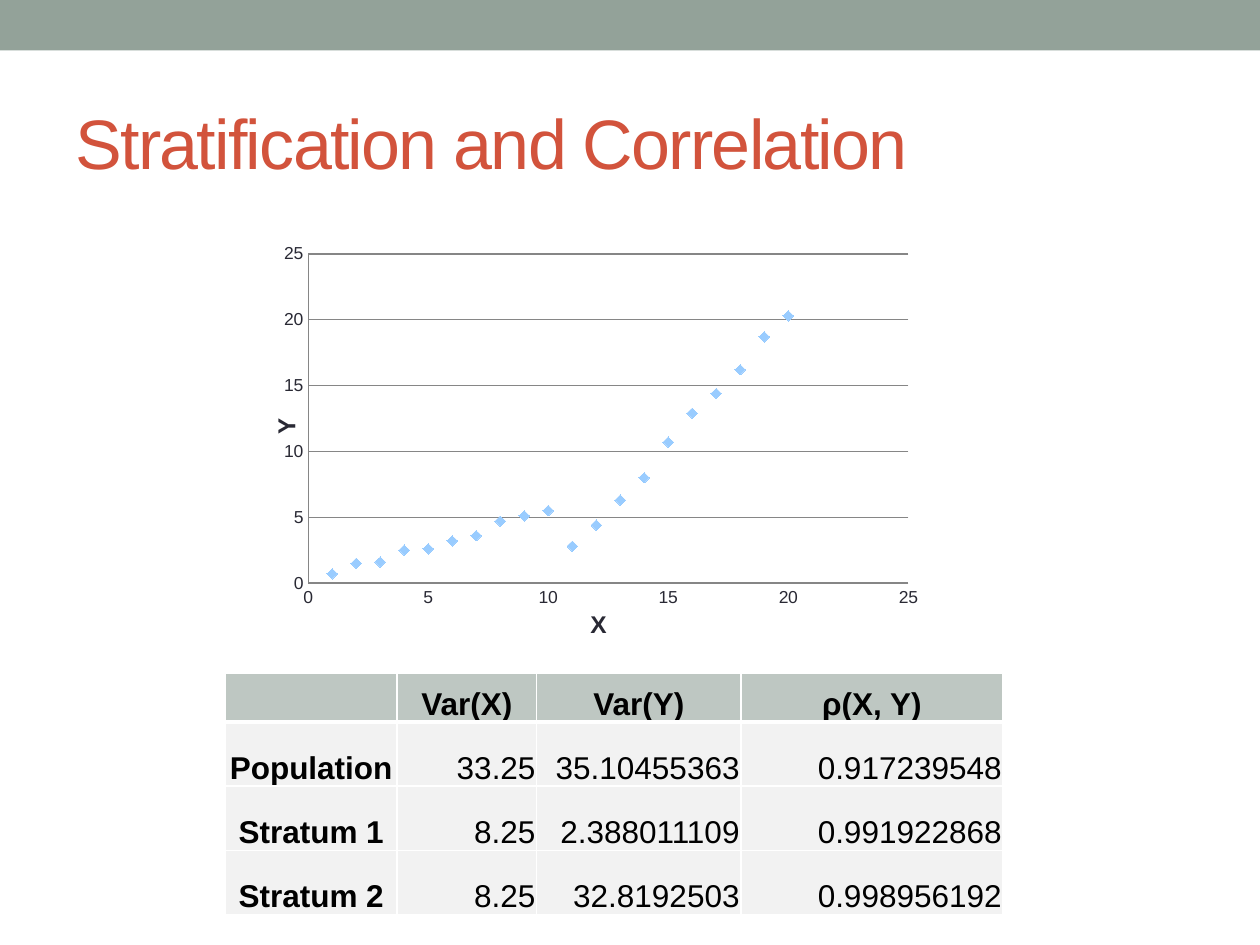
from dataclasses import dataclass

import pptx
import pptx.chart.data
import pptx.dml.color
import pptx.enum.chart
import pptx.enum.shapes
import pptx.enum.text
import pptx.oxml
import pptx.oxml.ns
import pptx.util

Inches, Pt = pptx.util.Inches, pptx.util.Pt
ALIGN, ANCHOR = pptx.enum.text.PP_ALIGN, pptx.enum.text.MSO_ANCHOR
XL = pptx.enum.chart
NS = pptx.oxml.ns.nsdecls
qn = pptx.oxml.ns.qn


@dataclass(frozen=True)
class Theme:
    font: str = "Arial"
    bar: str = "93A299"
    title: str = "D2533C"
    chart_text: str = "292934"
    marker: str = "99CCFF"
    line: str = "868686"
    header: str = "BEC7C2"
    body: str = "F2F2F2"
    border: str = "FFFFFF"
    table_text: str = "000000"
    title_size: int = 40
    tick_size: int = 10
    axis_size: int = 14
    table_size: int = 18


@dataclass(frozen=True)
class Box:
    """A place given as shares of the slide's width and height."""
    x: float
    y: float
    w: float
    h: float

    def place(self, prs) -> tuple:
        return tuple(int(share * size) for share, size in zip(
            (self.x, self.y, self.w, self.h),
            (prs.slide_width, prs.slide_height) * 2))


T = Theme()
BAR = Box(0, 0, 1, 0.4 / 7.5)
TITLE = Box(0.05, 0.58 / 7.5, 0.9, 0.144)
CHART = Box(0.205, 1.55 / 7.5, 0.591, 3.58 / 7.5)
TABLE = Box(0.179, 5.34 / 7.5, 0.617, 1.92 / 7.5)

Y_VALUES = [0.7, 1.5, 1.6, 2.5, 2.6, 3.2, 3.6, 4.7, 5.1, 5.5,
            2.8, 4.4, 6.3, 8, 10.7, 12.9, 14.4, 16.2, 18.7, 20.3]
COLUMNS = [1.36, 1.11, 1.62, 2.08]
ROWS = [0.39, 0.51, 0.51, 0.51]
CELLS = [
    ["", "Var(X)", "Var(Y)", "ρ(X, Y)"],
    ["Population", "33.25", "35.10455363", "0.917239548"],
    ["Stratum 1", "8.25", "2.388011109", "0.991922868"],
    ["Stratum 2", "8.25", "32.8192503", "0.998956192"],
]


def rgb(value: str):
    return pptx.dml.color.RGBColor.from_string(value)


def style(font, *, size: float, color: str, bold: bool = False) -> None:
    font.name, font.size, font.bold = T.font, Pt(size), bold
    font.color.rgb = rgb(color)


def write(tf, text: str, *, size: float, color: str, bold: bool = False,
          align=ALIGN.LEFT, after: float = 0, spacing: float = 0) -> None:
    p = tf.paragraphs[0]
    p.alignment, p.space_after = align, Pt(after)
    r = p.add_run()
    r.text = text
    style(r.font, size=size, color=color, bold=bold)
    if spacing:
        r.font._element.set("spc", str(int(spacing * 100)))


def set_layout(parent, index: int, x: float, y: float, size=None) -> None:
    """Fix a chart part in place, in shares of the chart's size."""
    for old in parent.findall(qn("c:layout")):
        parent.remove(old)
    parts = [("xMode", "edge"), ("yMode", "edge"), ("x", x), ("y", y)]
    if size:
        parts = [("layoutTarget", "inner"), *parts,
                 ("w", size[0]), ("h", size[1])]
    xml = "".join(f'<c:{name} val="{value}"/>' for name, value in parts)
    parent.insert(index, pptx.oxml.parse_xml(
        f'<c:layout {NS("c")}><c:manualLayout>{xml}</c:manualLayout></c:layout>'))


def format_axis(axis, title: str, x: float, y: float) -> None:
    axis.minimum_scale, axis.maximum_scale, axis.major_unit = 0, 25, 5
    axis.major_tick_mark = axis.minor_tick_mark = XL.XL_TICK_MARK.NONE
    axis.format.line.color.rgb = rgb(T.line)
    axis.format.line.width = Pt(0.75)
    axis.tick_labels.number_format = "General"
    axis.tick_labels.number_format_is_linked = False
    write(axis.axis_title.text_frame, title, size=T.axis_size,
          color=T.chart_text, bold=True, align=ALIGN.CENTER)
    set_layout(axis.axis_title._element, 1, x, y)


def add_scatter(prs, s) -> None:
    data = pptx.chart.data.XyChartData()
    series = data.add_series("Series 1")
    for x, y in enumerate(Y_VALUES, start=1):
        series.add_data_point(x, y)
    chart = s.shapes.add_chart(XL.XL_CHART_TYPE.XY_SCATTER,
                               *CHART.place(prs), data).chart
    chart.has_title = chart.has_legend = False
    style(chart.font, size=T.tick_size, color=T.chart_text)
    set_layout(chart._chartSpace.find(".//" + qn("c:plotArea")), 0,
               0.067, 0.132, (0.806, 0.74))
    chart.plots[0].vary_by_categories = False

    # Markers only, no joining line
    points = chart.plots[0].series[0]
    points.smooth = False
    points.format.line.fill.background()
    points.marker.style = XL.XL_MARKER_STYLE.DIAMOND
    points.marker.size = 6
    points.marker.format.fill.solid()
    points.marker.format.fill.fore_color.rgb = rgb(T.marker)
    points.marker.format.line.fill.background()

    # Axes and horizontal grid
    format_axis(chart.category_axis, "X ", 0.44, 0.92)
    format_axis(chart.value_axis, "Y", 0.01, 0.49)
    chart.category_axis.has_major_gridlines = False
    chart.value_axis.has_major_gridlines = True
    grid = chart.value_axis.major_gridlines.format.line
    grid.color.rgb, grid.width = rgb(T.line), Pt(0.75)


def set_borders(cell, top: float, bottom: float) -> None:
    widths = {"lnL": 1, "lnR": 1, "lnT": top, "lnB": bottom}
    for i, (side, width) in enumerate(widths.items()):
        cell._tc.get_or_add_tcPr().insert(i, pptx.oxml.parse_xml(
            f'<a:{side} {NS("a")} w="{Pt(width)}"><a:solidFill>'
            f'<a:srgbClr val="{T.border}"/></a:solidFill></a:{side}>'))


def add_variances(prs, s) -> None:
    table = s.shapes.add_table(len(ROWS), len(COLUMNS), *TABLE.place(prs)).table
    for column, width in zip(table.columns, COLUMNS):
        column.width = Inches(width)
    for row, height in zip(table.rows, ROWS):
        row.height = Inches(height)
    table.horz_banding = False
    for i, texts in enumerate(CELLS):
        for j, text in enumerate(texts):
            cell = table.cell(i, j)
            set_borders(cell, 3 if i == 1 else 1, 3 if i == 0 else 1)
            cell.fill.solid()
            cell.fill.fore_color.rgb = rgb(T.body if i else T.header)
            cell.vertical_anchor = ANCHOR.BOTTOM
            cell.margin_left = cell.margin_right = cell.margin_top = Inches(0.01)
            cell.margin_bottom = 0
            heading = i == 0 or j == 0
            if text:
                write(cell.text_frame, text, size=T.table_size,
                      color=T.table_text, bold=heading, after=6,
                      align=ALIGN.CENTER if heading else ALIGN.RIGHT)


def main() -> None:
    prs = pptx.Presentation()
    prs.slide_width, prs.slide_height = Inches(10), Inches(7.5)
    s = prs.slides.add_slide(prs.slide_layouts[5])

    # Top bar
    sp = s.shapes.add_shape(pptx.enum.shapes.MSO_SHAPE.RECTANGLE, *BAR.place(prs))
    sp.shadow.inherit = False
    sp.fill.solid()
    sp.fill.fore_color.rgb = rgb(T.bar)
    sp.line.fill.background()

    # Title
    title = s.shapes.title
    title.left, title.top, title.width, title.height = TITLE.place(prs)
    title.text_frame.vertical_anchor = ANCHOR.MIDDLE
    write(title.text_frame, "Stratification and Correlation",
          size=T.title_size, color=T.title, spacing=-1)

    add_scatter(prs, s)
    add_variances(prs, s)
    prs.save("out.pptx")


if __name__ == "__main__":
    main()
